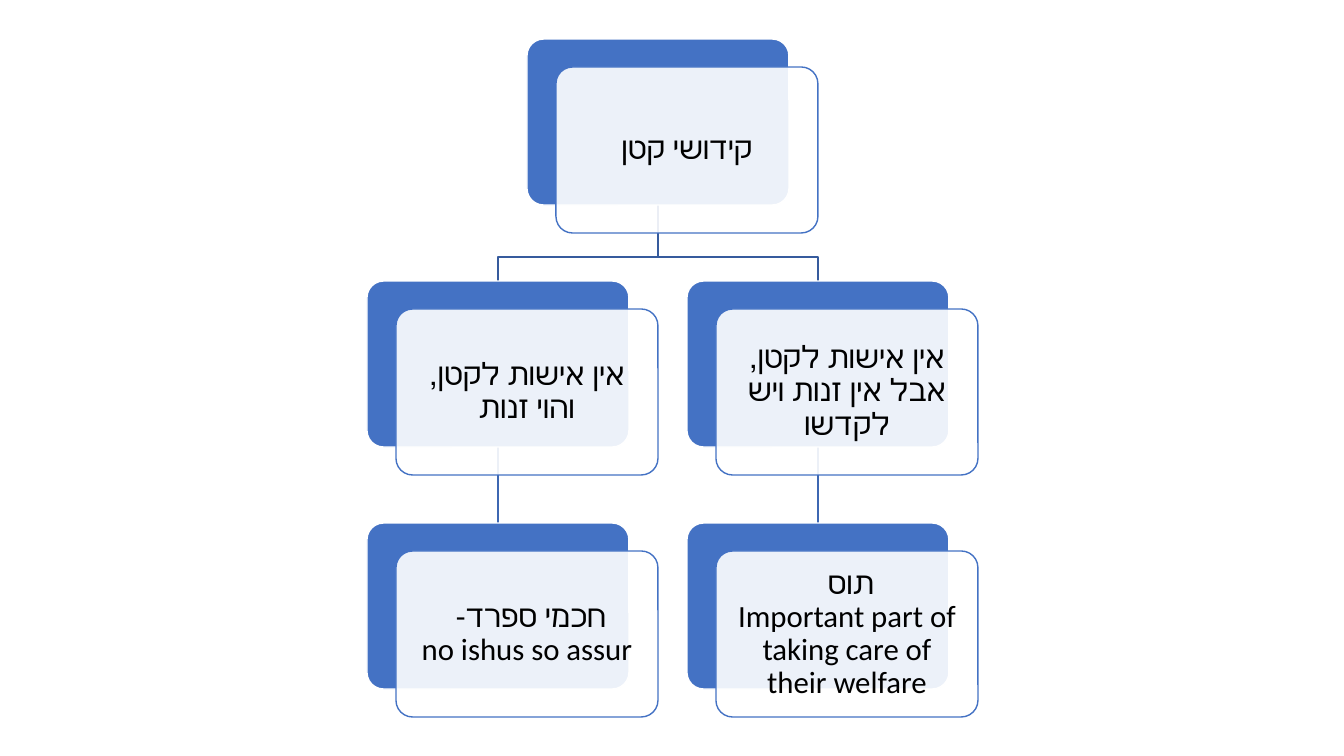
from pptx import Presentation
from pptx.dml.color import RGBColor
from pptx.enum.shapes import MSO_CONNECTOR, MSO_SHAPE
from pptx.enum.text import MSO_ANCHOR, PP_ALIGN
from pptx.oxml.ns import qn
from pptx.util import Pt
from lxml import etree

ROUND = MSO_SHAPE.ROUNDED_RECTANGLE
LINE = MSO_CONNECTOR.STRAIGHT
MIDDLE = MSO_ANCHOR.MIDDLE
CENTER = PP_ALIGN.CENTER

# Content: name -> (column, row, text)
NODES = {
    "root": (0.5, 0, "קידושי קטן"),
    "harlotry": (0, 1, "אין אישות לקטן, והוי זנות"),
    "spain": (0, 2, "חכמי ספרד- \nno ishus so assur"),
    "betroth": (1, 1, "אין אישות לקטן, אבל אין זנות ויש לקדשו"),
    "tosafot": (1, 2, "תוס \nImportant part of taking care of their welfare"),
}
LINKS = [("betroth", "tosafot"), ("root", "betroth"),
         ("harlotry", "spain"), ("root", "harlotry")]
COLORS = {"blue": "4472C4", "white": "FFFFFF", "text": "000000",
          "upper": "365B9D", "lower": "3E67B2"}

# Layout in px
SCALE = 914400 / 100.8
WIDE, HIGH = 1344, 756
LEFT, TOP = 367, 39
STEP_X, STEP_Y = 320, 242
CARD_W, CARD_H = 262, 166
SHIFT_X, SHIFT_Y = 29, 28
BEND = 52
PAD = 5
INSET = 9


def emu(px):
    return round(px * SCALE)


def color(name):
    return RGBColor.from_string(COLORS[name])


def place(name):
    col, row, _ = NODES[name]
    return LEFT + col * STEP_X, TOP + row * STEP_Y


def style(shape, fill, line):
    shape.shadow.inherit = False
    shape.fill.solid()
    shape.fill.fore_color.rgb = color(fill)
    shape.line.color.rgb = color(line)
    shape.line.width = Pt(1)


def link(shapes, start, end):
    x1, y1 = place(start)
    x2, y2 = place(end)
    x1, x2, y1 = x1 + CARD_W / 2, x2 + CARD_W / 2, y1 + CARD_H
    if x1 == x2:
        wire = shapes.add_connector(LINE, emu(x1), emu(y1), emu(x2), emu(y2))
        etree.SubElement(wire._element.spPr, qn("a:effectLst"))
        tint = "lower"
    else:
        path = shapes.build_freeform(emu(x1), emu(y1))
        bend = emu(y1 + BEND)
        path.add_line_segments(
            [(emu(x1), bend), (emu(x2), bend), (emu(x2), emu(y2))], close=False)
        wire = path.convert_to_shape()
        wire.fill.background()
        wire.shadow.inherit = False
        tint = "upper"
    wire.line.color.rgb = color(tint)
    wire.line.width = Pt(1)


def card(shapes, x, y, fill, line):
    shape = shapes.add_shape(ROUND, emu(x), emu(y), emu(CARD_W), emu(CARD_H))
    shape.adjustments[0] = 0.1
    style(shape, fill, line)
    return shape


def label(shapes, x, y, text):
    box = shapes.add_textbox(emu(x + PAD), emu(y + PAD),
                             emu(CARD_W - 2 * PAD), emu(CARD_H - 2 * PAD))
    frame = box.text_frame
    frame.word_wrap = True
    frame.vertical_anchor = MIDDLE
    frame.margin_left = frame.margin_right = emu(INSET)
    frame.margin_top = frame.margin_bottom = emu(INSET)
    para = frame.paragraphs[0]
    para.text = text
    para.alignment = CENTER
    para.line_spacing = 0.9
    para._p.get_or_add_pPr().set("rtl", "1")
    para.font.size = Pt(22)
    para.font.name = "Calibri"
    para.font.color.rgb = color("text")


def node(shapes, name):
    x, y = place(name)
    card(shapes, x, y, "blue", "white")
    x, y = x + SHIFT_X, y + SHIFT_Y
    front = card(shapes, x, y, "white", "blue")
    # Front card is 90% opaque
    tone = front._element.spPr.find(qn("a:solidFill"))[0]
    etree.SubElement(tone, qn("a:alpha")).set("val", "90000")
    label(shapes, x, y, NODES[name][2])


def main():
    deck = Presentation()
    deck.slide_width, deck.slide_height = emu(WIDE), emu(HIGH)
    shapes = deck.slides.add_slide(deck.slide_layouts[6]).shapes
    # Links lie behind the cards
    for start, end in LINKS:
        link(shapes, start, end)
    for name in NODES:
        node(shapes, name)
    deck.save("out.pptx")


if __name__ == "__main__":
    main()
